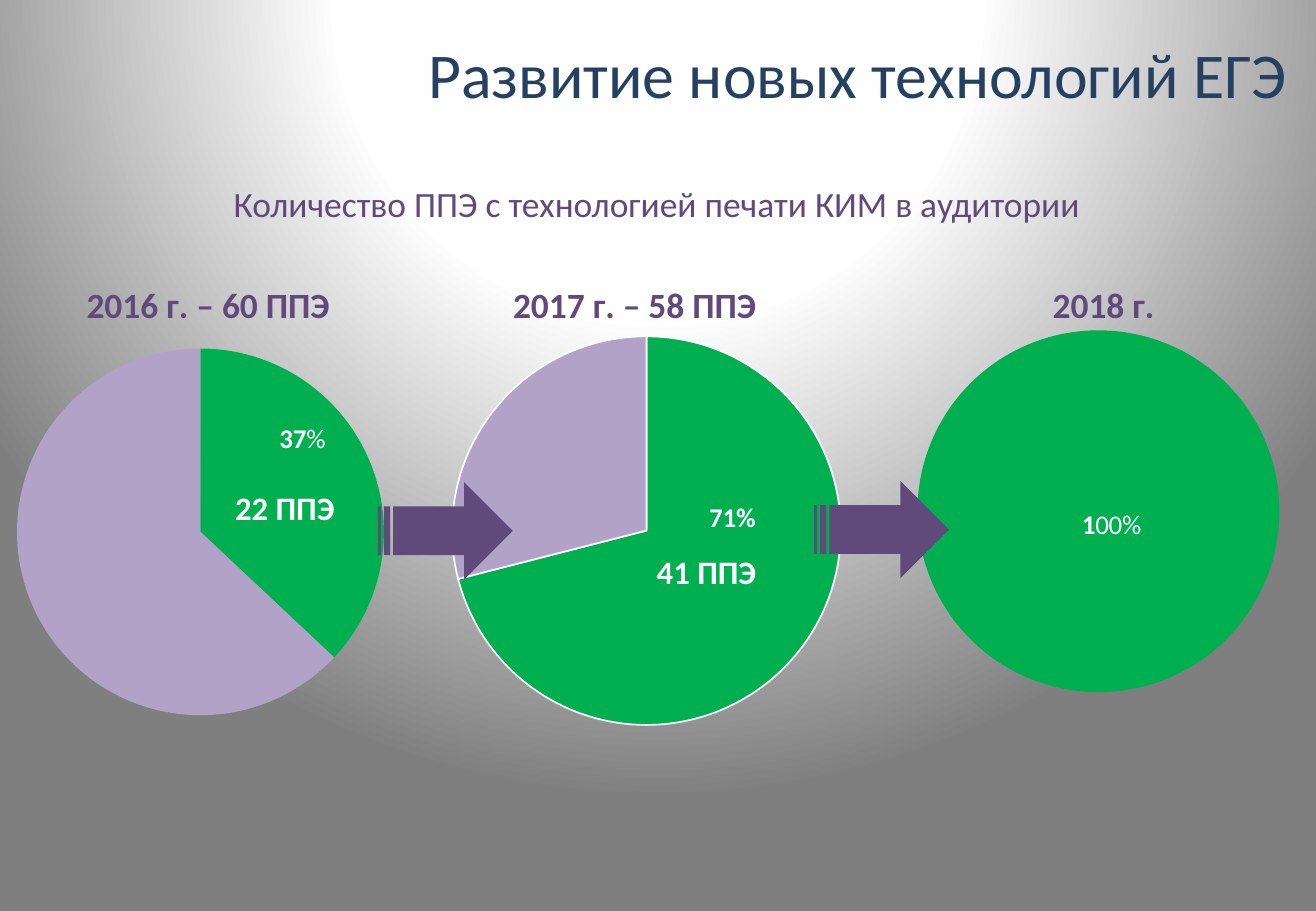
from lxml import etree
from pptx import Presentation
from pptx import util as u
from pptx.chart.data import CategoryChartData
from pptx.dml.color import RGBColor
from pptx.enum import chart as ch, shapes, text
from pptx.oxml import parse_xml
from pptx.oxml.ns import nsdecls, qn

NAVY = RGBColor(0x25, 0x40, 0x61)
PURPLE = RGBColor(0x60, 0x4A, 0x7B)
LILAC = RGBColor(0xB3, 0xA2, 0xC7)
GREEN = RGBColor(0x00, 0xB0, 0x50)
RED = RGBColor(0xC0, 0x50, 0x4D)
WHITE = RGBColor(0xFF, 0xFF, 0xFF)
BLACK = RGBColor(0x00, 0x00, 0x00)
FONT = "Calibri"
CHART_TOP, CHART_HEIGHT = 1.98, 4.2
HEADING_TOP = 2.25


def style(font, size, color, bold=False):
    font.name, font.size, font.bold = FONT, u.Pt(size), bold
    font.color.rgb = color


def set_background(slide):
    slide.background.fill.gradient()
    gradient = slide.element.find(".//" + qn("a:gradFill"))
    gradient.getparent().replace(gradient, parse_xml(
        f'<a:gradFill {nsdecls("a")} rotWithShape="1"><a:gsLst>'
        '<a:gs pos="0"><a:srgbClr val="FFFFFF"/></a:gs>'
        '<a:gs pos="40000"><a:srgbClr val="FEFEFE"/></a:gs>'
        '<a:gs pos="100000"><a:srgbClr val="7F7F7F"/></a:gs></a:gsLst>'
        '<a:path path="circle">'
        '<a:fillToRect l="50000" t="-80000" r="50000" b="180000"/>'
        '</a:path></a:gradFill>'))


def add_text(slide, wording, box, size, color, bold=False):
    frame = slide.shapes.add_textbox(*map(u.Inches, box)).text_frame
    frame.word_wrap = True
    frame.margin_left = frame.margin_right = u.Inches(0.12)
    frame.margin_top = frame.margin_bottom = u.Inches(0.06)
    paragraph = frame.paragraphs[0]
    paragraph.text = wording
    paragraph.alignment = text.PP_ALIGN.CENTER
    style(paragraph.runs[0].font, size, color, bold)
    return frame


def add_hanging_text(slide, wording, box, size, color, bold=False):
    paragraph = add_text(slide, wording, box, size, color, bold).paragraphs[0]
    paragraph.space_before = u.Pt(8.2)
    properties = paragraph._p.get_or_add_pPr()
    properties.set("marL", str(u.Inches(0.41)))
    properties.set("indent", str(-u.Inches(0.41)))


def manual_layout(**settings):
    layout = etree.Element(qn("c:layout"))
    manual = etree.SubElement(layout, qn("c:manualLayout"))
    for tag, value in settings.items():
        etree.SubElement(manual, qn("c:" + tag)).set("val", str(value))
    return layout


def place(parent, layout, after):
    """Put a layout into parent, behind the child named by after if present."""
    for old in parent.findall(qn("c:layout")):
        parent.remove(old)
    anchor = parent.find(qn(after))
    parent.insert(0 if anchor is None else parent.index(anchor) + 1, layout)


def add_pie(slide, left, width, heading, heading_left, pie, categories, values,
            colors, label_runs, label_shift, outlined=False):
    data = CategoryChartData()
    data.categories = categories
    data.add_series("Series 1", values)
    chart = slide.shapes.add_chart(
        ch.XL_CHART_TYPE.PIE, u.Inches(left), u.Inches(CHART_TOP),
        u.Inches(width), u.Inches(CHART_HEIGHT), data).chart
    style(chart.font, 18, BLACK)
    chart.has_legend = False
    plot = chart.plots[0]
    plot.vary_by_categories = True

    # Heading
    title = chart.chart_title
    title.text_frame.text = heading
    style(title.text_frame.paragraphs[0].runs[0].font, 21, PURPLE, True)
    place(title._element, manual_layout(
        xMode="edge", yMode="edge", x=(heading_left - left) / width,
        y=(HEADING_TOP - CHART_TOP) / CHART_HEIGHT), "c:tx")

    # Pie circle
    pie_left, pie_top, diameter = pie
    place(chart.element.find(".//" + qn("c:plotArea")), manual_layout(
        layoutTarget="inner", xMode="edge", yMode="edge",
        x=(pie_left - left) / width, y=(pie_top - CHART_TOP) / CHART_HEIGHT,
        w=diameter / width, h=diameter / CHART_HEIGHT), "c:none")

    # Slices
    series = plot.series[0]
    for index, color in enumerate(colors):
        slice_format = series.points[index].format
        slice_format.fill.solid()
        slice_format.fill.fore_color.rgb = color
        if outlined:
            slice_format.line.color.rgb = WHITE
            slice_format.line.width = u.Pt(1)
        else:
            slice_format.line.fill.background()

    # Share label
    label = series.points[0].data_label
    paragraph = label.text_frame.paragraphs[0]
    for wording, bold in label_runs:
        run = paragraph.add_run()
        run.text = wording
        style(run.font, 16, WHITE, bold)
    label.position = ch.XL_LABEL_POSITION.CENTER
    series.data_labels.show_value = False
    shift_x, shift_y = label_shift
    place(series._element.find(".//" + qn("c:dLbl")),
          manual_layout(x=shift_x, y=shift_y), "c:idx")


def add_arrow(slide, left, top):
    arrow = slide.shapes.add_shape(
        shapes.MSO_SHAPE.STRIPED_RIGHT_ARROW, u.Inches(left), u.Inches(top),
        u.Inches(1.11), u.Inches(0.8))
    arrow.shadow.inherit = False
    arrow.fill.solid()
    arrow.fill.fore_color.rgb = PURPLE
    arrow.line.fill.background()


def main():
    deck = Presentation()
    deck.slide_width, deck.slide_height = u.Inches(10.83), u.Inches(7.5)
    slide = deck.slides.add_slide(deck.slide_layouts[6])
    set_background(slide)

    # Title and subtitle
    title = add_text(slide, "Развитие новых технологий ЕГЭ",
                     (3.03, 0.08, 7.68, 1.05), 37.8, NAVY)
    title.vertical_anchor = text.MSO_ANCHOR.MIDDLE
    title.paragraphs[0].alignment = text.PP_ALIGN.RIGHT
    add_hanging_text(slide, "Количество ППЭ с технологией печати КИМ в аудитории",
                     (0.53, 1.44, 9.75, 0.59), 21, PURPLE)

    # Yearly shares
    add_pie(slide, 0, 3.67, "2016 г. – 60 ППЭ", 0.66, (0.14, 2.87, 3.02),
            ["", "Кв. 2"], [37, 63], [GREEN, LILAC],
            [("37", True), ("%", False)], (0.04, -0.11))
    add_pie(slide, 3.58, 3.75, "2017 г. – 58 ППЭ", 4.17, (3.72, 2.77, 3.2),
            ["", "Кв. 2"], [71, 29], [GREEN, LILAC],
            [("71%", True)], (0.02, -0.14), outlined=True)
    add_pie(slide, 7.25, 3.58, "2018 г.", 8.61, (7.55, 2.72, 2.98),
            ["", ""], [100, 0], [GREEN, RED],
            [("1", True), ("00%", False)], (0.03, -0.15))

    # Arrows between years
    add_arrow(slide, 3.11, 3.97)
    add_arrow(slide, 6.7, 3.96)

    # Counts on the pies
    for count, left, top in (("22 ППЭ ", 1.78, 3.96), ("41 ППЭ ", 5.25, 4.48)):
        add_hanging_text(slide, count, (left, top, 1.19, 0.42), 19.4, WHITE, True)

    deck.save("out.pptx")


if __name__ == "__main__":
    main()
